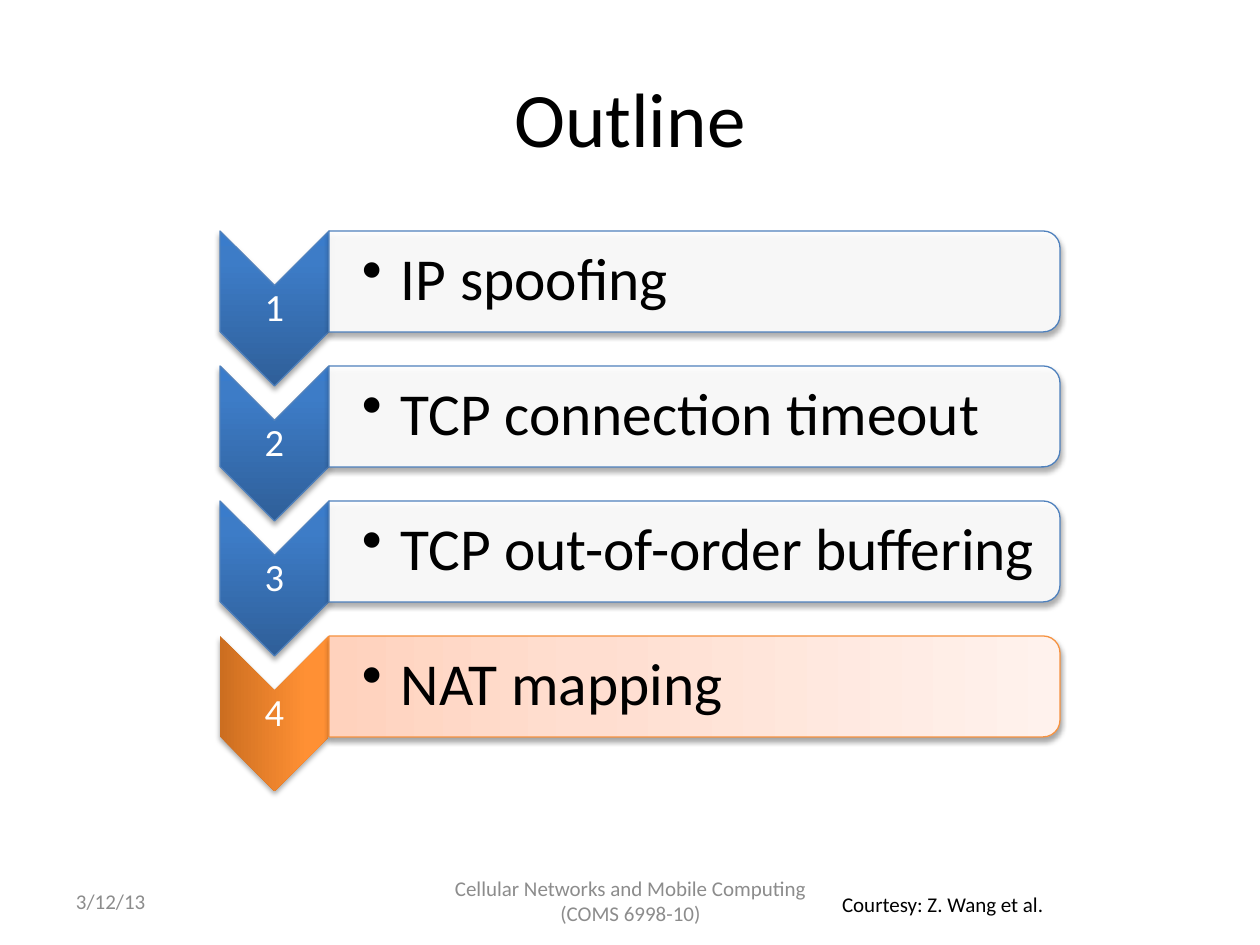
from pptx import Presentation
from pptx.dml.color import RGBColor
from pptx.enum.shapes import MSO_SHAPE as Shape
from pptx.enum.text import MSO_ANCHOR as Anchor, PP_ALIGN as Align
from pptx.oxml import parse_xml
from pptx.oxml.ns import nsdecls, qn
from pptx.util import Emu, Pt

PX = 914400 / 126
THEME = {
    "font": "Calibri",
    "text": "000000", "muted": "8C8C8C", "number": "FFFFFF", "bar": "FFFFFF",
    "blue_line": "4F81BD", "orange_line": "F69240",
    "blue": [(0, "2F5F99"), (80, "3D7CC7"), (100, "3A7CCB")],
    "orange": [(0, "CC6E20"), (80, "FF9034"), (100, "FF9136")],
    "pale_orange": [(0, "FFD2BD"), (35, "FFDED0"), (100, "FFF2ED")],
    "title_size": 44, "item_size": 34, "number_size": 22, "footer_size": 12,
}


def add_turned_shape(kind, left, top, width, height, fill, line, turn_fill=True):
    """Add a shape turned by 90 degrees that covers the given box."""
    shape = slide.shapes.add_shape(
        kind, Emu(round((left + (width - height) / 2) * PX)),
        Emu(round((top + (height - width) / 2) * PX)),
        Emu(round(height * PX)), Emu(round(width * PX)))
    shape.rotation = 90
    properties = shape._element.spPr
    if isinstance(fill, list):
        shape.fill.gradient()
        shape.fill.gradient_angle = 90  # counter-clockwise
        gradient = properties.find(qn("a:gradFill"))
        gradient.set("rotWithShape", str(int(turn_fill)))
        stops = "".join(f'<a:gs pos="{position * 1000}"><a:srgbClr val="{color}"/></a:gs>'
                        for position, color in fill)
        gradient.replace(gradient.find(qn("a:gsLst")),
                         parse_xml(f'<a:gsLst {nsdecls("a")}>{stops}</a:gsLst>'))
    else:
        shape.fill.solid()
        shape.fill.fore_color.rgb = RGBColor.from_string(fill)
        properties.find(".//" + qn("a:srgbClr")).append(
            parse_xml(f'<a:alpha {nsdecls("a")} val="90000"/>'))
    if line:
        shape.line.color.rgb = RGBColor.from_string(line)
        shape.line.width = Pt(0.75)
    else:
        shape.line.fill.background()
    shape.shadow.inherit = False
    properties.find(qn("a:effectLst")).append(parse_xml(
        f'<a:outerShdw {nsdecls("a")} blurRad="{Pt(3.1)}" dist="{Pt(1.8)}" dir="5400000" '
        'rotWithShape="0"><a:srgbClr val="000000"><a:alpha val="35000"/></a:srgbClr></a:outerShdw>'))


def add_text(text, left, top, width, height, size, color, align=Align.LEFT,
             insets=(13, 6, 13, 6), wrap=True, anchor=Anchor.MIDDLE):
    box = slide.shapes.add_textbox(*(Emu(round(n * PX)) for n in (left, top, width, height)))
    frame = box.text_frame
    frame.word_wrap = wrap
    frame.vertical_anchor = anchor
    (frame.margin_left, frame.margin_top,
     frame.margin_right, frame.margin_bottom) = (Emu(round(n * PX)) for n in insets)
    paragraph = frame.paragraphs[0]
    paragraph.text = text
    paragraph.alignment = align
    paragraph.font.name = THEME["font"]
    paragraph.font.size = Pt(THEME[size])
    paragraph.font.color.rgb = RGBColor.from_string(THEME[color])
    return paragraph


presentation = Presentation()
presentation.slide_width = Emu(round(1260 * PX))
presentation.slide_height = Emu(round(945 * PX))
slide = presentation.slides.add_slide(presentation.slide_layouts[6])

# Title
add_text("Outline", 63, 38, 1134, 157, "title_size", "text", Align.CENTER)

# Numbered list, with the last item highlighted
items = ["IP spoofing", "TCP connection timeout", "TCP out-of-order buffering", "NAT mapping"]
for index, item in enumerate(items):
    top = 231 + 135 * index
    current = index == len(items) - 1
    add_turned_shape(Shape.CHEVRON, 220, top, 109, 155,
                     THEME["orange" if current else "blue"],
                     None if current else THEME["blue_line"], turn_fill=current)
    number = add_text(str(index + 1), 220, top + 55, 109, 47, "number_size", "number",
                      Align.CENTER, insets=(2, 2, 2, 2))
    number.line_spacing = 0.9

    add_turned_shape(Shape.ROUND_2_SAME_RECTANGLE, 329, top, 731, 101,
                     THEME["pale_orange" if current else "bar"],
                     THEME["orange_line" if current else "blue_line"])
    label = add_text(item, 329, top + 5, 726, 91, "item_size", "text", insets=(33, 2, 2, 2))
    label.line_spacing = 0.9
    bullet = label._p.get_or_add_pPr()
    bullet.set("marL", str(round(39 * PX)))
    bullet.set("indent", str(round(-39 * PX)))
    bullet.insert_element_before(parse_xml(f'<a:buChar {nsdecls("a")} char="•"/>'),
                                 "a:tabLst", "a:defRPr", "a:extLst")

# Footer
add_text("Cellular Networks and Mobile Computing (COMS 6998-10)", 431, 876, 399, 50,
         "footer_size", "muted", Align.CENTER)
add_text("Courtesy: Z. Wang et al.", 829, 886, 231, 38, "footer_size", "text",
         wrap=False, anchor=Anchor.TOP)
add_text("3/12/13", 63, 876, 294, 50, "footer_size", "muted")

presentation.save("out.pptx")
